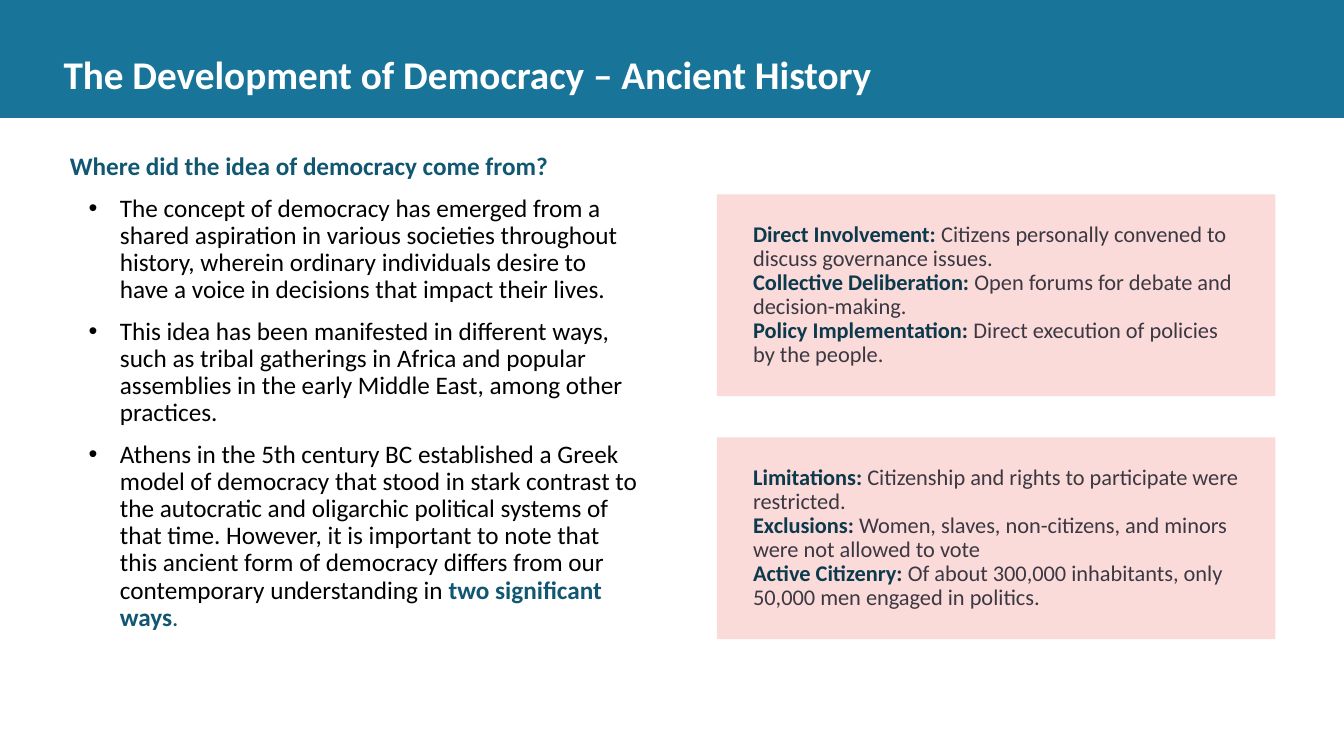
import dataclasses
import lxml.etree
import pptx
import pptx.dml.color
import pptx.enum.shapes
import pptx.enum.text
import pptx.oxml.ns
import pptx.util

Inches = pptx.util.Inches


@dataclasses.dataclass
class Theme:
    font: str = "Calibri"
    band: str = "187498"
    accent: str = "115772"
    panel: str = "FBDADA"
    label: str = "0B3A4C"
    detail: str = "3B3842"
    black: str = "000000"
    white: str = "FFFFFF"
    title: int = 28
    lead: int = 20
    body: int = 18
    note: int = 16


theme = Theme()


def write(frame, text, inset=0, anchor="TOP", line=None, before=0, bullets=False):
    frame.word_wrap = True
    frame.auto_size = pptx.enum.text.MSO_AUTO_SIZE.NONE
    frame.vertical_anchor = getattr(pptx.enum.text.MSO_ANCHOR, anchor)
    for side in ("left", "top", "right", "bottom"):
        setattr(frame, "margin_" + side, Inches(inset))
    for row, parts in enumerate(text):
        para = frame.add_paragraph() if row else frame.paragraphs[0]
        para.alignment = pptx.enum.text.PP_ALIGN.LEFT
        para.line_spacing = line
        para.space_before = pptx.util.Pt(before)
        if bullets and row:
            props = para._p.get_or_add_pPr()
            props.set("marL", str(Inches(0.56)))
            props.set("indent", str(Inches(-0.31)))
            tint = lxml.etree.SubElement(props, pptx.oxml.ns.qn("a:buClr"))
            shade = lxml.etree.SubElement(tint, pptx.oxml.ns.qn("a:srgbClr"))
            shade.set("val", theme.black)
            face = lxml.etree.SubElement(props, pptx.oxml.ns.qn("a:buFont"))
            face.set("typeface", "Arial")
            mark = lxml.etree.SubElement(props, pptx.oxml.ns.qn("a:buChar"))
            mark.set("char", "•")
        for words, size, color, bold in parts:
            run = para.add_run()
            run.text = words
            run.font.name = theme.font
            run.font.size = pptx.util.Pt(size)
            run.font.bold = bold
            run.font.color.rgb = pptx.dml.color.RGBColor.from_string(color)


def block(shapes, left, top, width, height, color):
    shape = shapes.add_shape(
        pptx.enum.shapes.MSO_SHAPE.RECTANGLE,
        Inches(left), Inches(top), Inches(width), Inches(height))
    shape.shadow.inherit = False
    shape.fill.solid()
    shape.fill.fore_color.rgb = pptx.dml.color.RGBColor.from_string(color)
    shape.line.fill.background()
    return shape


deck = pptx.Presentation()
deck.slide_width = Inches(13.33)
deck.slide_height = Inches(7.5)
slide = deck.slides.add_slide(deck.slide_layouts[5])

title = slide.shapes.title
title.left, title.top = Inches(0.63), Inches(0.36)
title.width, title.height = Inches(12.46), Inches(0.74)
write(title.text_frame,
      [[("The Development of Democracy – Ancient History", theme.title, theme.white, True)]],
      anchor="MIDDLE")
band = block(slide.shapes, 0, 0, 13.33, 1.17, theme.band)
title.element.addprevious(band.element)

story = [
    [(" ", theme.lead, theme.accent, False),
     ("Where did the idea of democracy come from?", theme.body, theme.accent, True)],
    [("The concept of democracy has emerged from a shared aspiration in various "
      "societies throughout history, wherein ordinary individuals desire to have a "
      "voice in decisions that impact their lives.", theme.body, theme.black, False)],
    [("This idea has been manifested in different ways, such as tribal gatherings in "
      "Africa and popular assemblies in the early Middle East, among other practices.",
      theme.body, theme.black, False)],
    [("Athens in the 5th century BC established a Greek model of democracy that stood "
      "in stark contrast to the autocratic and oligarchic political systems of that "
      "time. However, it is important to note that this ancient form of democracy "
      "differs from our contemporary understanding in ", theme.body, theme.black, False),
     ("two significant ways", theme.body, theme.accent, True),
     (".", theme.body, theme.accent, False)],
]
body = slide.shapes.add_textbox(Inches(0.63), Inches(1.5), Inches(5.7), Inches(5.33))
write(body.text_frame, story, line=0.9, before=10, bullets=True)

panels = [
    [("Direct Involvement: ", "Citizens personally convened to discuss governance issues."),
     ("Collective Deliberation: ", "Open forums for debate and decision-making."),
     ("Policy Implementation: ", "Direct execution of policies by the people.")],
    [("Limitations: ", "Citizenship and rights to participate were restricted."),
     ("Exclusions: ", "Women, slaves, non-citizens, and minors were not allowed to vote"),
     ("Active Citizenry: ", "Of about 300,000 inhabitants, only 50,000 men engaged in politics.")],
]
for index, points in enumerate(panels):
    top = 1.93 + 2.41 * index
    group = slide.shapes.add_group_shape()
    block(group.shapes, 7.11, top, 5.54, 2, theme.panel)
    note = group.shapes.add_textbox(Inches(7.4), Inches(top + 0.27), Inches(4.97), Inches(1.46))
    lines = [[(label, theme.note, theme.label, True), (detail, theme.note, theme.detail, False)]
             for label, detail in points]
    write(note.text_frame, lines, inset=0.07, anchor="MIDDLE", line=0.9)

deck.save("out.pptx")
